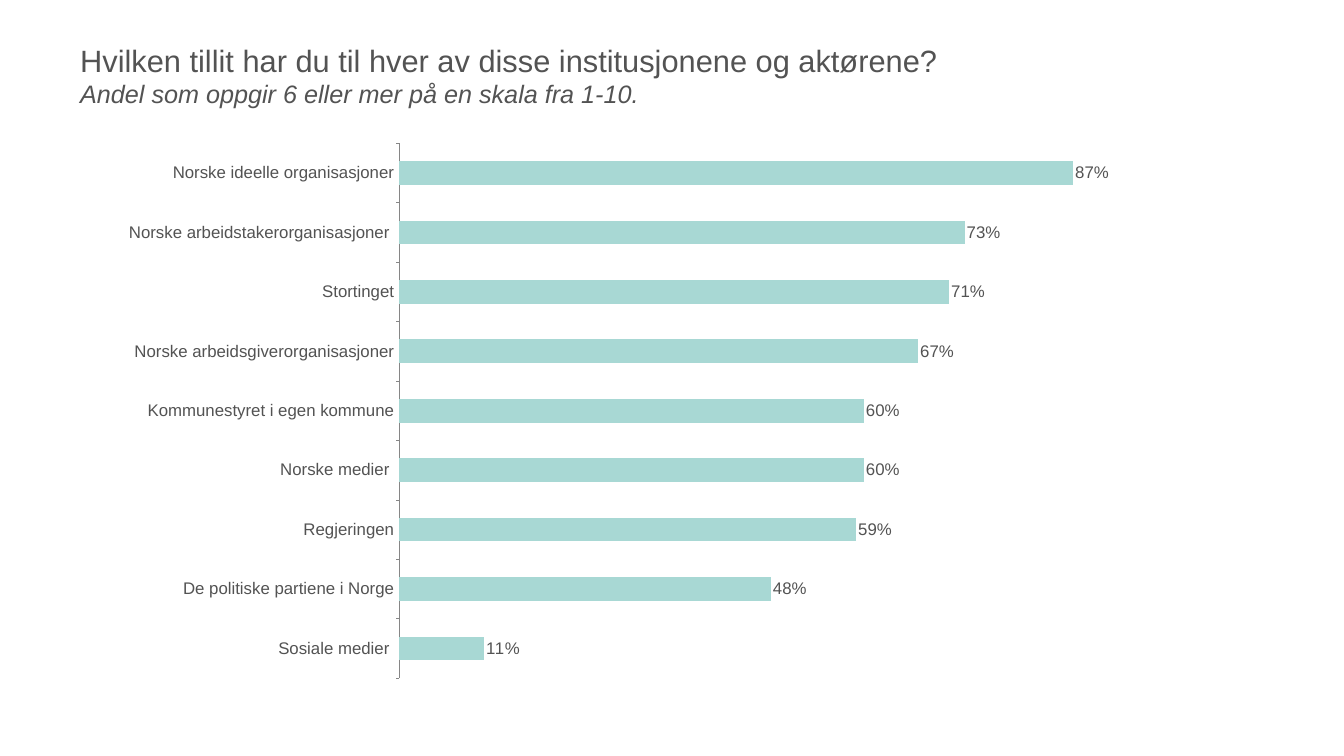
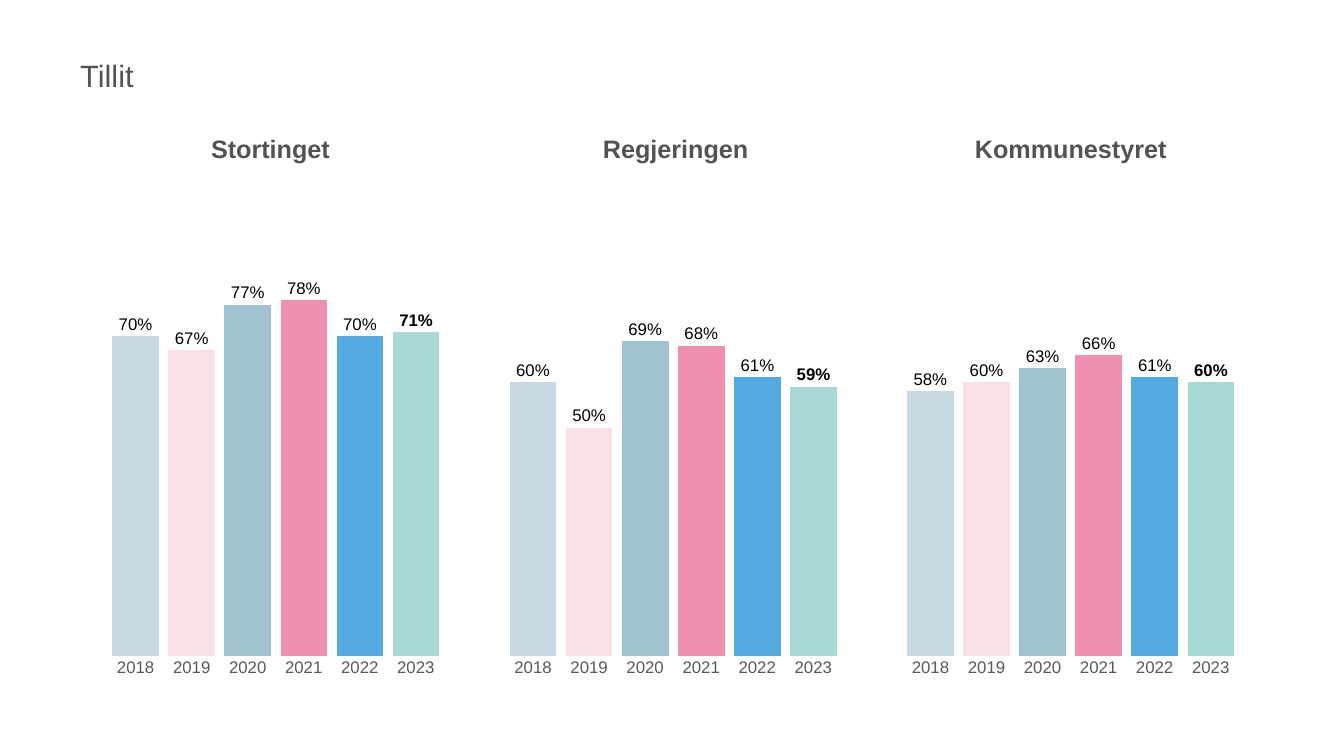
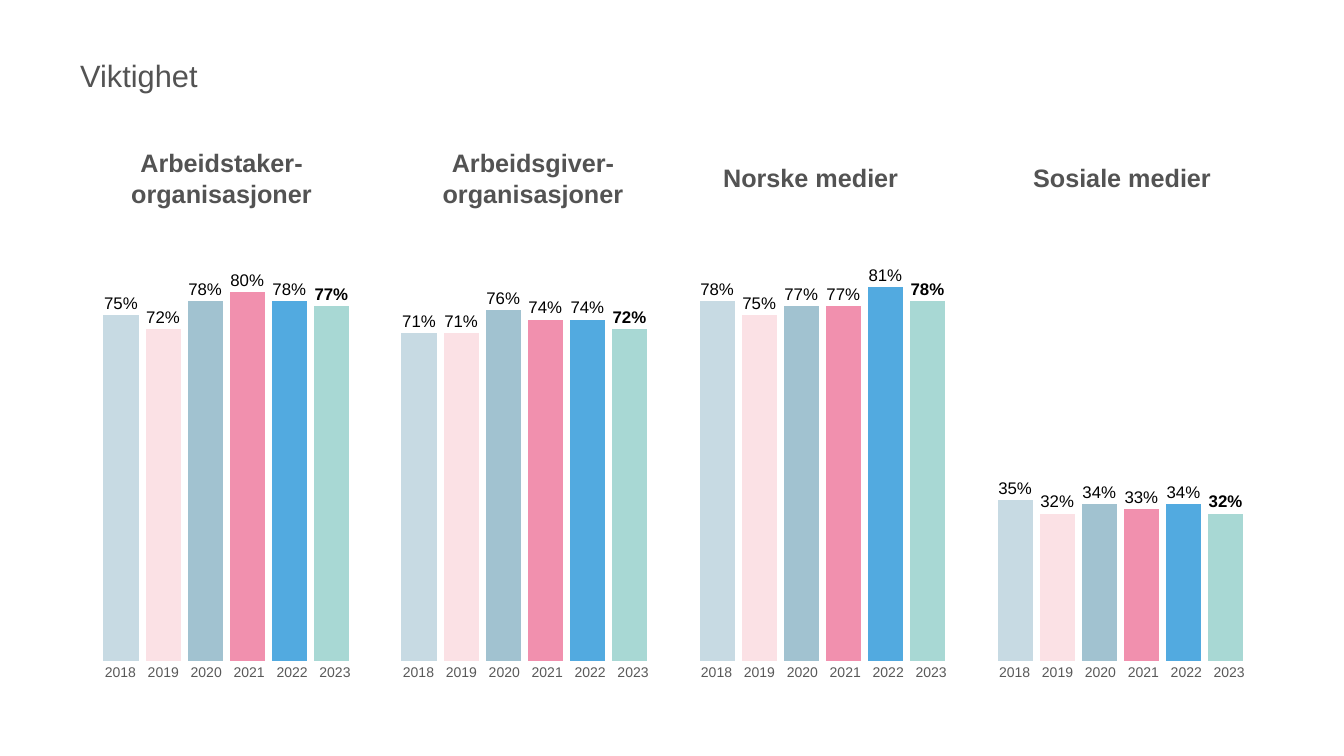
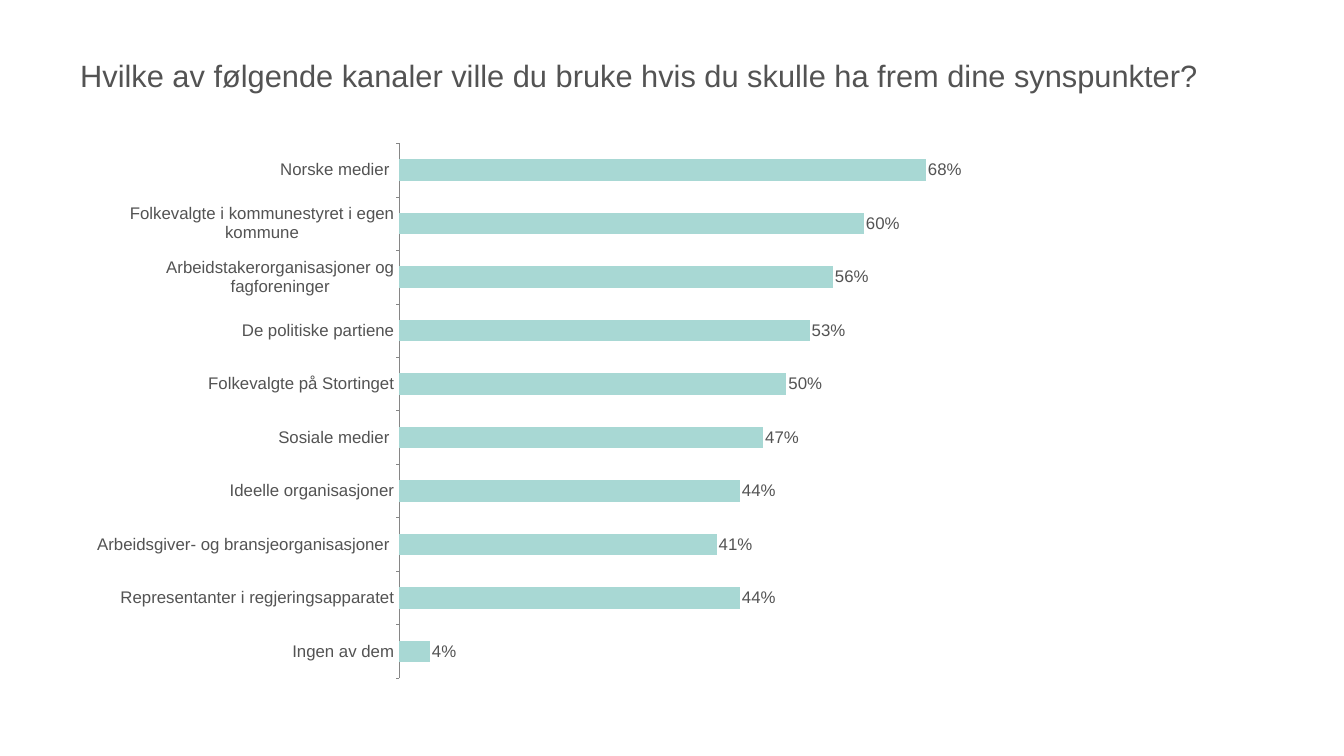
from dataclasses import dataclass

from lxml import etree
from pptx import Presentation
from pptx.chart.data import CategoryChartData
from pptx.dml.color import RGBColor
from pptx.enum.chart import XL_CHART_TYPE as ChartType
from pptx.enum.chart import XL_LABEL_POSITION as LabelPos
from pptx.enum.chart import XL_TICK_MARK as Tick
from pptx.enum.text import MSO_ANCHOR as Anchor
from pptx.enum.text import MSO_AUTO_SIZE as AutoSize
from pptx.enum.text import PP_ALIGN as Align
from pptx.oxml.ns import qn
from pptx.util import Inches, Pt

# Shared look
FONT = "Arial"
TEXT = RGBColor(0x53, 0x53, 0x53)
YEAR_GREY = RGBColor(0x59, 0x59, 0x59)
BLACK = RGBColor(0x00, 0x00, 0x00)
AXIS_GREY = RGBColor(0x86, 0x86, 0x86)
MINT = RGBColor(0xA8, 0xD8, 0xD4)
YEAR_COLOURS = {
    "2018": RGBColor(0xC7, 0xDA, 0xE3),
    "2019": RGBColor(0xFB, 0xE1, 0xE5),
    "2020": RGBColor(0xA1, 0xC2, 0xD0),
    "2021": RGBColor(0xF1, 0x90, 0xAE),
    "2022": RGBColor(0x52, 0xAA, 0xE0),
    "2023": MINT,
}
LATEST = "2023"


@dataclass
class Box:
    left: float
    top: float
    width: float
    height: float

    def inner(self, left, top, width, height):
        """A box inside this one, given in percent of its size."""
        return Box(self.left + self.width * left / 100, self.top + self.height * top / 100,
                   self.width * width / 100, self.height * height / 100)

    def emu(self):
        return [Inches(n) for n in (self.left, self.top, self.width, self.height)]


SLIDE = Box(0, 0, 26.67, 15)
TITLE = SLIDE.inner(5.74, 3.13, 88.71, 13.6)
CONTENT = SLIDE.inner(5.74, 16.73, 88.71, 74.47)

# Content
TRUST = {
    "Norske ideelle organisasjoner": 0.87,
    "Norske arbeidstakerorganisasjoner ": 0.73,
    "Stortinget": 0.71,
    "Norske arbeidsgiverorganisasjoner": 0.67,
    "Kommunestyret i egen kommune": 0.6,
    "Norske medier ": 0.6,
    "Regjeringen": 0.59,
    "De politiske partiene i Norge": 0.48,
    "Sosiale medier ": 0.11,
}
CHANNELS = {
    "Norske medier ": 0.68,
    "Folkevalgte i kommunestyret i egen kommune": 0.6,
    "Arbeidstakerorganisasjoner og fagforeninger": 0.56,
    "De politiske partiene": 0.53,
    "Folkevalgte på Stortinget": 0.5,
    "Sosiale medier ": 0.47,
    "Ideelle organisasjoner": 0.44,
    "Arbeidsgiver- og bransjeorganisasjoner ": 0.41,
    "Representanter i regjeringsapparatet": 0.44,
    "Ingen av dem": 0.04,
}
TRUST_BY_YEAR = {
    "Stortinget": (0.7, 0.67, 0.77, 0.78, 0.7, 0.71),
    "Regjeringen": (0.6, 0.5, 0.69, 0.68, 0.61, 0.59),
    "Kommunestyret": (0.58, 0.6, 0.63, 0.66, 0.61, 0.6),
}
IMPORTANCE_BY_YEAR = {
    "Arbeidstaker-organisasjoner": (0.75, 0.72, 0.78, 0.8, 0.78, 0.77),
    "Arbeidsgiver-organisasjoner": (0.71, 0.71, 0.76, 0.74, 0.74, 0.72),
    "Norske medier": (0.78, 0.75, 0.77, 0.77, 0.81, 0.78),
    "Sosiale medier": (0.35, 0.32, 0.34, 0.33, 0.34, 0.32),
}


@dataclass
class YearLayout:
    """Places of headings and year rows in percent of the chart's box, plot in shares."""
    heading_lefts: tuple
    heading_top: float
    heading_width: float
    years_left: float
    years_top: float
    year_step: float
    year_size: int
    plot: tuple


THREE_GROUPS = YearLayout((2.62, 36.6, 69.74), -5.28, 27.2, 3.09, 93.73, 4.7, 24,
                          (0, 0.13, 1, 0.81))
FOUR_GROUPS = YearLayout((2.07, 28.19, 51.48, 77.6), 0, 20.08, 2.07, 94.63, 3.6, 20,
                         (0, 0.13, 1, 0.82))
BAR_PLOT = (0.27, 0.03, 0.65, 0.95)


def style(font, size, colour, bold=False, italic=False):
    font.name, font.size, font.bold, font.italic = FONT, Pt(size), bold, italic
    font.color.rgb = colour


def prepare(frame):
    frame.word_wrap = True
    frame.auto_size = AutoSize.NONE
    frame.vertical_anchor = Anchor.MIDDLE
    frame.margin_left = frame.margin_right = Inches(0.06)
    frame.margin_top = frame.margin_bottom = Inches(0.06)
    return frame.paragraphs[0]


def add_run(paragraph, words, *look, **more):
    run = paragraph.add_run()
    run.text = words
    style(run.font, *look, **more)


def titled_slide(deck, question, subtitle=None):
    slide = deck.slides.add_slide(deck.slide_layouts[5])
    title = slide.shapes.title
    title.left, title.top, title.width, title.height = TITLE.emu()
    line = prepare(title.text_frame)
    line.alignment = Align.LEFT
    add_run(line, question, 44, TEXT)
    if subtitle:
        line.add_line_break()
        add_run(line, subtitle, 36, TEXT, italic=True)
    return slide


def text_line(slide, box):
    return prepare(slide.shapes.add_textbox(*box.emu()).text_frame)


def set_plot_area(chart, shares):
    """Fix the inner plot area as shares of the chart: x, y, w, h."""
    plot_area = chart._chartSpace.chart.plotArea
    for old in plot_area.findall(qn("c:layout")):
        plot_area.remove(old)
    layout = etree.Element(qn("c:layout"))
    manual = etree.SubElement(layout, qn("c:manualLayout"))
    settings = [("layoutTarget", "inner"), ("xMode", "edge"), ("yMode", "edge")]
    for tag, value in settings + list(zip("xywh", shares)):
        etree.SubElement(manual, qn("c:" + tag)).set("val", str(value))
    plot_area.insert(0, layout)


def percent_chart(slide, box, kind, categories, series, plot_shares):
    """Add a chart of shares; series holds (name, values, fill, label colour, bold)."""
    data = CategoryChartData(number_format="0%")
    data.categories = categories
    for name, values, *_ in series:
        data.add_series(name, values)
    chart = slide.shapes.add_chart(kind, *box.emu(), data).chart
    chart.has_legend = chart.has_title = False
    style(chart.font, 10, BLACK)

    scale = chart.value_axis
    scale.minimum_scale, scale.maximum_scale = 0, 1
    scale.has_major_gridlines = scale.visible = False

    bars = chart.plots[0]
    bars.gap_width, bars.overlap, bars.vary_by_categories = 150, -20, False
    for drawn, (_, _, fill, label_colour, bold) in zip(bars.series, series):
        drawn.format.fill.solid()
        drawn.format.fill.fore_color.rgb = fill
        drawn.invert_if_negative = False
        labels = drawn.data_labels
        labels.show_value = True
        labels.position = LabelPos.OUTSIDE_END
        labels.number_format, labels.number_format_is_linked = "0%", False
        style(labels.font, 24, label_colour, bold)
    set_plot_area(chart, plot_shares)
    return chart


def ranking(slide, box, answers):
    """Horizontal bars, first answer on top."""
    series = [("Andel", tuple(answers.values()), MINT, TEXT, False)]
    chart = percent_chart(slide, box, ChartType.BAR_CLUSTERED, list(answers), series, BAR_PLOT)
    axis = chart.category_axis
    axis.reverse_order = True
    axis.has_major_gridlines = False
    axis.major_tick_mark, axis.minor_tick_mark = Tick.OUTSIDE, Tick.NONE
    axis.format.line.color.rgb = AXIS_GREY
    axis.format.line.width = Pt(0.75)
    style(axis.tick_labels.font, 24, TEXT)


def year_row(slide, box, step, size):
    """The years below one group, set on equal tab stops."""
    line = text_line(slide, box)
    tabs = etree.SubElement(line._p.get_or_add_pPr(), qn("a:tabLst"))
    for stop in range(1, len(YEAR_COLOURS)):
        etree.SubElement(tabs, qn("a:tab"), pos=str(Inches(step * stop)), algn="l")
    add_run(line, "\t".join(YEAR_COLOURS), size, YEAR_GREY)


def development(slide, box, groups, layout):
    """Columns by year for each group, with headings and year rows."""
    by_year = zip(YEAR_COLOURS.items(), zip(*groups.values()))
    series = [(year, values, fill, BLACK, year == LATEST) for (year, fill), values in by_year]
    chart = percent_chart(slide, box, ChartType.COLUMN_CLUSTERED, list(groups), series,
                          layout.plot)
    chart.category_axis.visible = False

    # Headings
    for heading, left in zip(groups, layout.heading_lefts):
        line = text_line(slide, box.inner(left, layout.heading_top, layout.heading_width, 18.26))
        line.alignment = Align.CENTER
        add_run(line, heading, 36, TEXT, bold=True)

    # Year rows
    step = box.width * layout.year_step / 100
    for group in range(len(groups)):
        left = layout.years_left + 100 / len(groups) * group
        row = box.inner(left, layout.years_top, layout.year_step * len(YEAR_COLOURS), 4.4)
        year_row(slide, row, step, layout.year_size)


def main():
    deck = Presentation()
    deck.slide_width, deck.slide_height = Inches(SLIDE.width), Inches(SLIDE.height)

    trust = titled_slide(deck, "Hvilken tillit har du til hver av disse institusjonene og aktørene?",
                         "Andel som oppgir 6 eller mer på en skala fra 1-10.")
    ranking(trust, CONTENT, TRUST)

    development(titled_slide(deck, "Tillit"), CONTENT, TRUST_BY_YEAR, THREE_GROUPS)
    development(titled_slide(deck, "Viktighet"), CONTENT, IMPORTANCE_BY_YEAR, FOUR_GROUPS)

    channels = titled_slide(
        deck, "Hvilke av følgende kanaler ville du bruke hvis du skulle ha frem dine synspunkter?")
    ranking(channels, CONTENT, CHANNELS)

    deck.save("out.pptx")


if __name__ == "__main__":
    main()
